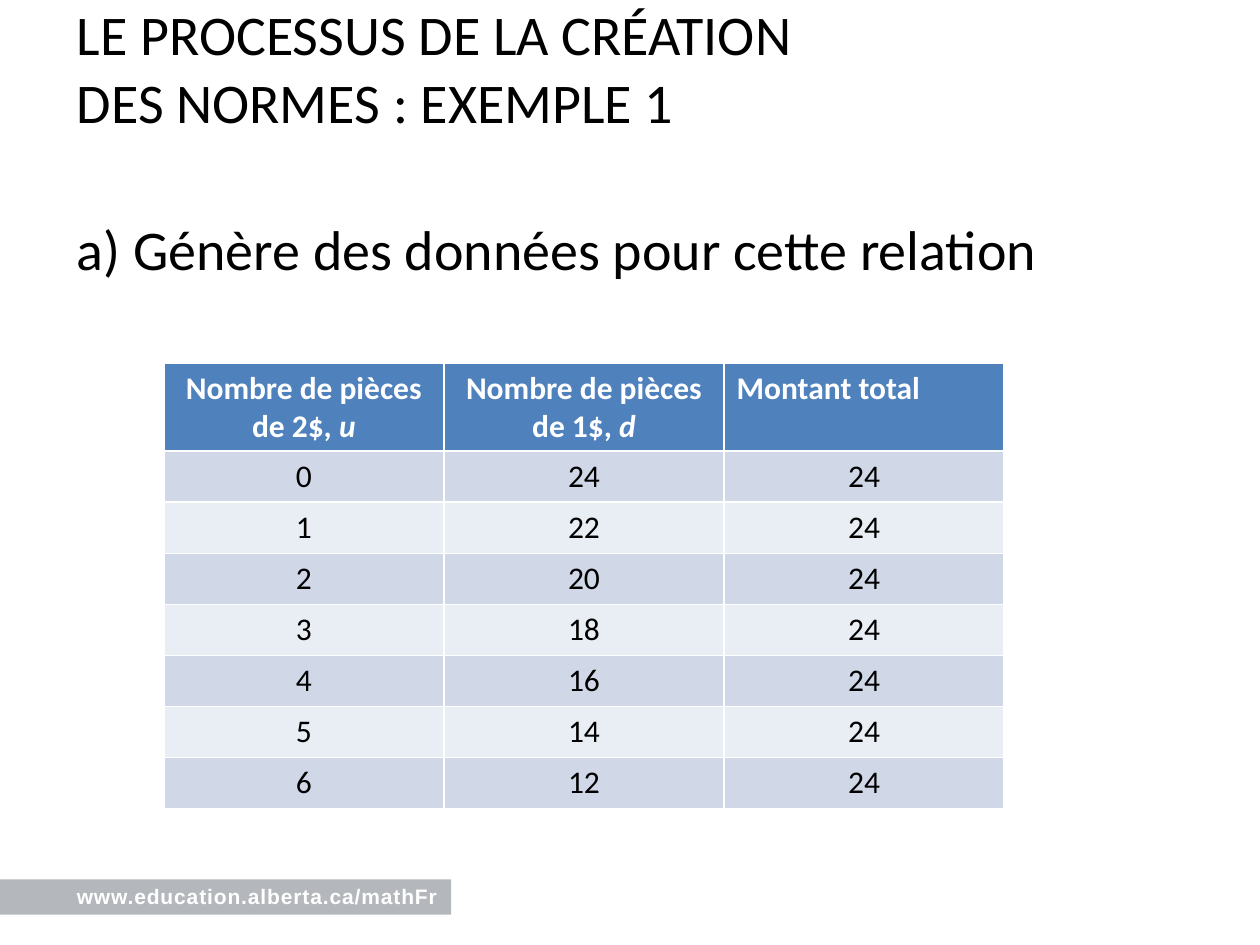
from lxml import etree
from pptx import Presentation
from pptx.dml.color import RGBColor
from pptx.enum.shapes import MSO_SHAPE
from pptx.enum.text import PP_ALIGN
from pptx.oxml.ns import qn
from pptx.util import Inches, Pt

RECT = MSO_SHAPE.RECTANGLE
LEFT, CENTER = PP_ALIGN.LEFT, PP_ALIGN.CENTER
COLORS = {
    "text": "000000",
    "white": "FFFFFF",
    "bar": "6A737B",
    "head": "4F81BD",
    "odd": "D0D8E8",
    "even": "E9EDF4",
}
MARGIN = 0.61
COINS = 24
HEADS = [
    ("Nombre de pièces de 2$, ", "u", CENTER),
    ("Nombre de pièces de 1$, ", "d", CENTER),
    ("Montant total", "", LEFT),
]


def color(name):
    return RGBColor.from_string(COLORS[name])


def style(para, size, tint="text", bold=False, face="Calibri"):
    font = para.font
    font.name, font.size, font.bold = face, Pt(size), bold
    font.color.rgb = color(tint)


def add_text(slide, box, text, size, **look):
    frame = slide.shapes.add_textbox(*map(Inches, box)).text_frame
    frame.word_wrap = True
    frame.margin_left = frame.margin_right = 0
    frame.margin_top = frame.margin_bottom = 0
    para = frame.paragraphs[0]
    para.text = text
    style(para, size, **look)
    return para


def add_footer(slide, left, top, width, height):
    """Half-transparent bar with the web address in spaced letters."""
    bar = slide.shapes.add_shape(RECT, *map(Inches, (left, top, width, height)))
    bar.shadow.inherit = False
    bar.line.fill.background()
    bar.fill.solid()
    bar.fill.fore_color.rgb = color("bar")
    tint = next(bar.fill._xPr.iter(qn("a:srgbClr")))
    etree.SubElement(tint, qn("a:alpha"), val="50000")
    box = (left + MARGIN, top + 0.03, width - MARGIN, 0.2)
    para = add_text(slide, box, "www.education.alberta.ca/mathFr", 12,
                    tint="white", bold=True, face="Arial")
    para.runs[0].font._element.set("spc", "50")


def fill_cell(cell, fill):
    cell.fill.solid()
    cell.fill.fore_color.rgb = color(fill)
    return cell.text_frame.paragraphs[0]


def add_coins(slide, left, top, width, height):
    """Table of the coin counts that make up the same total."""
    data = [(twos, COINS - 2 * twos, COINS) for twos in range(7)]
    box = map(Inches, (left, top, width, height))
    table = slide.shapes.add_table(len(data) + 1, len(HEADS), *box).table
    head = 0.7
    for row in table.rows:
        row.height = Inches((height - head) / len(data))
    table.rows[0].height = Inches(head)

    for col, (label, symbol, align) in enumerate(HEADS):
        para = fill_cell(table.cell(0, col), "head")
        para.alignment = align
        para.add_run().text = label
        if symbol:
            run = para.add_run()
            run.text = symbol
            run.font.italic = True
        style(para, 18, "white", True)

    for row, values in enumerate(data, 1):
        for col, value in enumerate(values):
            para = fill_cell(table.cell(row, col), "odd" if row % 2 else "even")
            para.text = str(value)
            para.alignment = CENTER
            style(para, 18)


def main():
    deck = Presentation()
    deck.slide_width, deck.slide_height = Inches(10), Inches(7.5)
    slide = deck.slides.add_slide(deck.slide_layouts[6])
    add_footer(slide, 0, 6.98, 3.58, 0.28)
    add_text(slide, (MARGIN, 0, 6.46, 1.07),
             "LE PROCESSUS DE LA CRÉATION DES NORMES : EXEMPLE 1", 32)
    add_text(slide, (MARGIN, 1.7, 8.8, 4.96),
             "a) Génère des données pour cette relation", 32)
    add_coins(slide, 1.3, 2.88, 6.67, 3.54)
    deck.save("out.pptx")


if __name__ == "__main__":
    main()
